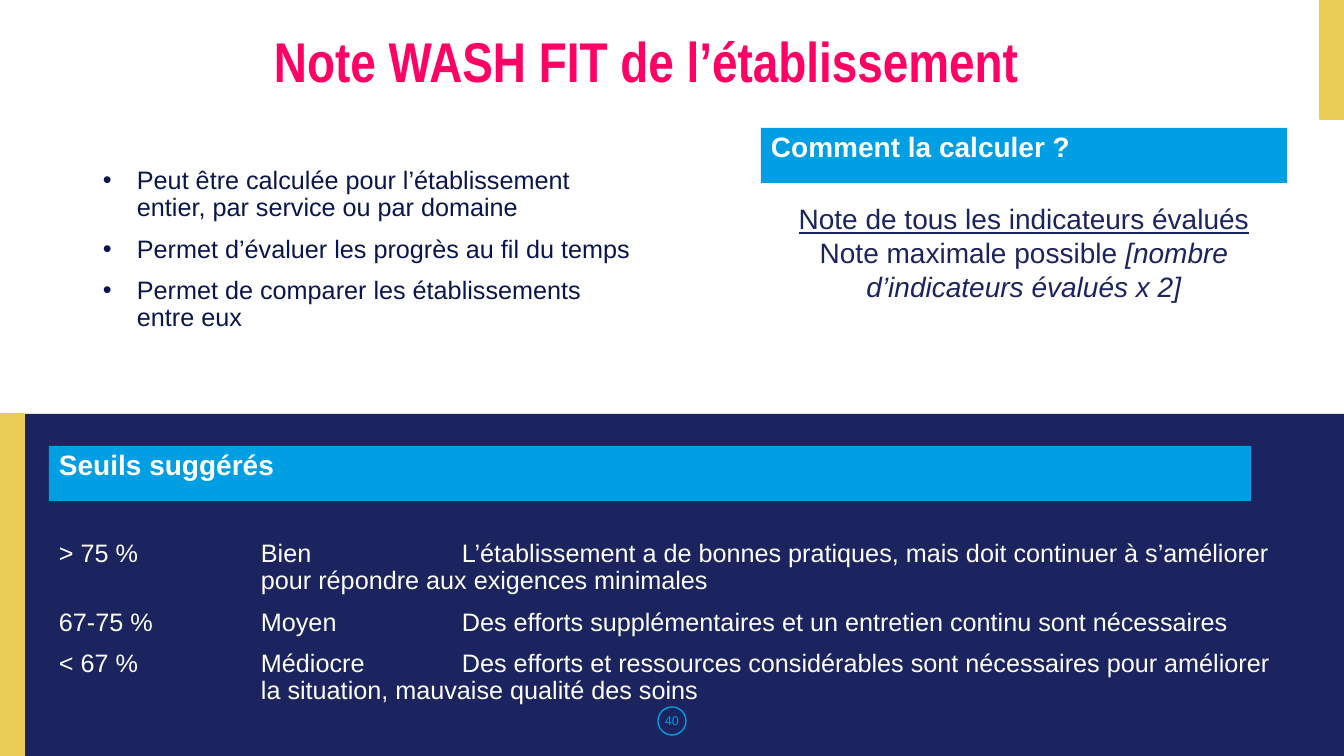
from dataclasses import dataclass

from lxml import etree
from pptx import Presentation
from pptx.dml.color import RGBColor
from pptx.enum.shapes import MSO_SHAPE
from pptx.enum.text import MSO_ANCHOR, PP_ALIGN
from pptx.oxml.ns import qn
from pptx.util import Pt

RECT, OVAL = MSO_SHAPE.RECTANGLE, MSO_SHAPE.OVAL
LEFT, CENTER = PP_ALIGN.LEFT, PP_ALIGN.CENTER
TOP, MIDDLE = MSO_ANCHOR.TOP, MSO_ANCHOR.MIDDLE
SCALE = 914400 / 100.8  # EMU in one px
WIDE, HIGH = 1344, 756


@dataclass(frozen=True)
class Theme:
    navy: str = "1C245F"
    ink: str = "09164D"
    gold: str = "EACD54"
    blue: str = "009EE3"
    pink: str = "FF0064"
    white: str = "FFFFFF"
    font: str = "Arial"
    narrow: str = "Arial Narrow"
    title: int = 40
    head: int = 20
    body: int = 18
    small: int = 9


T = Theme()


def emu(px):
    return round(px * SCALE)


def block(slide, box, fill=None, line=None, weight=1, kind=RECT):
    shape = slide.shapes.add_shape(kind, *map(emu, box))
    shape.shadow.inherit = False
    if fill:
        shape.fill.solid()
        shape.fill.fore_color.rgb = RGBColor.from_string(fill)
    else:
        shape.fill.background()
    if line:
        shape.line.color.rgb = RGBColor.from_string(line)
        shape.line.width = Pt(weight)
    else:
        shape.line.fill.background()
    return shape


def label(slide, box):
    return slide.shapes.add_textbox(*map(emu, box))


def frame(shape, anchor=TOP, top=5):
    text = shape.text_frame
    text.word_wrap = True
    text.vertical_anchor = anchor
    text.margin_left = text.margin_right = emu(10)
    text.margin_top, text.margin_bottom = emu(top), emu(5)
    return text


def para(text, first, align=LEFT, lead=0.9, gap=0):
    p = text.paragraphs[0] if first else text.add_paragraph()
    p.alignment = align
    p.line_spacing = lead
    p.space_before = Pt(0 if first else gap)
    return p


def run(p, words, size, color, font=T.font, bold=False, italic=False, under=False):
    r = p.add_run()
    r.text = words
    r.font.name, r.font.size = font, Pt(size)
    r.font.color.rgb = RGBColor.from_string(color)
    r.font.bold, r.font.italic, r.font.underline = bold, italic, under


def bullet(p, color, indent):
    props = p._p.get_or_add_pPr()
    props.set("marL", str(emu(indent)))
    props.set("indent", str(-emu(indent)))
    tint = etree.SubElement(props, qn("a:buClr"))
    etree.SubElement(tint, qn("a:srgbClr"), val=color)
    etree.SubElement(props, qn("a:buFont"), typeface=T.font)
    etree.SubElement(props, qn("a:buChar"), char="•")


def tabs(p, stops):
    group = etree.SubElement(p._p.get_or_add_pPr(), qn("a:tabLst"))
    for stop in stops:
        etree.SubElement(group, qn("a:tab"), pos=str(emu(stop)), algn="l")


def banner(slide, box, words):
    text = frame(block(slide, box, T.blue))
    run(para(text, True), words, T.head, T.white, bold=True)


# Page background: navy lower band with gold accents
def ground(slide, box):
    x, y, w, h = box
    bar, split = 24, 414
    block(slide, (x + bar, y + split, w - bar, h - split), T.navy)
    block(slide, (x, y + split, bar, h - split), T.gold, T.gold)
    block(slide, (x + w - bar, y, bar, 119), T.gold, T.gold)


# Slide title
def heading(slide, box):
    p = para(frame(label(slide, box)), True, CENTER)
    run(p, "Note WASH FIT de l’établissement ", T.title, T.pink, T.narrow, bold=True)


# Bulleted uses of the score
def uses(slide, box):
    text = frame(label(slide, box))
    points = (
        "Peut être calculée pour l’établissement entier, par service ou par domaine",
        "Permet d’évaluer les progrès au fil du temps",
        "Permet de comparer les établissements entre eux",
    )
    for i, words in enumerate(points):
        p = para(text, i == 0, gap=10)
        bullet(p, T.ink, 34)
        run(p, words, T.body, T.ink)


# Formula under its banner
def formula(slide, box):
    x, y, w, h = box
    banner(slide, (x, y, w, 55), "Comment la calculer ?")
    text = frame(block(slide, (x, y + 69, w, h - 69), line=T.white, weight=0.75))
    top = para(text, True, CENTER, 1.0)
    run(top, "Note de tous les indicateurs évalués", T.head, T.navy, under=True)
    base = para(text, False, CENTER, 1.0)
    run(base, "Note maximale possible ", T.head, T.navy)
    run(base, "[nombre d’indicateurs évalués x 2]", T.head, T.navy, italic=True)


# Thresholds: range, rating and meaning set on tab stops
def levels(slide, box):
    x, y, w, h = box
    banner(slide, (x, y, w - 53, 55), "Seuils suggérés")
    text = frame(label(slide, (x, y + 50, w, h - 50)), top=45)
    rows = (
        ("> 75 %", "Bien",
         "L’établissement a de bonnes pratiques, mais doit continuer à s’améliorer",
         "pour répondre aux exigences minimales"),
        ("67-75 %", "Moyen",
         "Des efforts supplémentaires et un entretien continu sont nécessaires", ""),
        ("< 67 %", "Médiocre",
         "Des efforts et ressources considérables sont nécessaires pour améliorer",
         "la situation, mauvaise qualité des soins"),
    )
    for i, (*cells, rest) in enumerate(rows):
        p = para(text, i == 0, gap=10)
        tabs(p, (202, 403))
        run(p, "\t".join(cells), T.body, T.white)
        if rest:
            p.add_line_break()
            run(p, "\t" + rest, T.body, T.white)


# Page number in a ring
def folio(slide, box):
    x, y, w, h = box
    size = 28
    ring = (x + (w - size) // 2, y + (h - size) // 2, size, size)
    block(slide, ring, line=T.blue, kind=OVAL)
    p = para(frame(label(slide, box), MIDDLE), True, CENTER, 1.0)
    run(p, "40", T.small, T.blue)


def main():
    deck = Presentation()
    deck.slide_width, deck.slide_height = emu(WIDE), emu(HIGH)
    slide = deck.slides.add_slide(deck.slide_layouts[6])
    ground(slide, (0, 0, WIDE, HIGH))
    uses(slide, (93, 163, 559, 232))
    levels(slide, (49, 446, 1255, 249))
    formula(slide, (761, 128, 526, 181))
    heading(slide, (73, 29, 1159, 79))
    folio(slide, (0, 701, WIDE, 40))
    deck.save("out.pptx")


if __name__ == "__main__":
    main()
